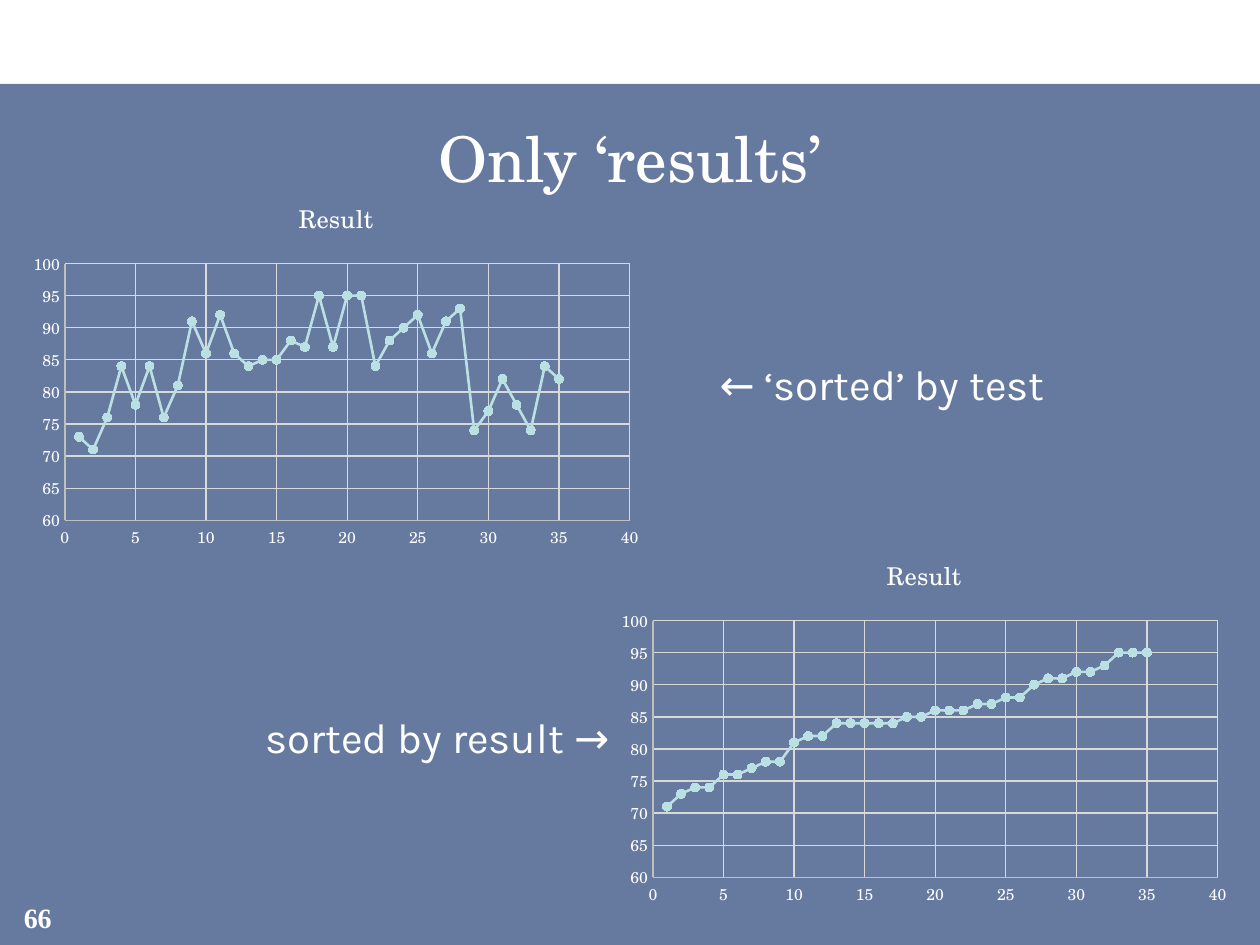
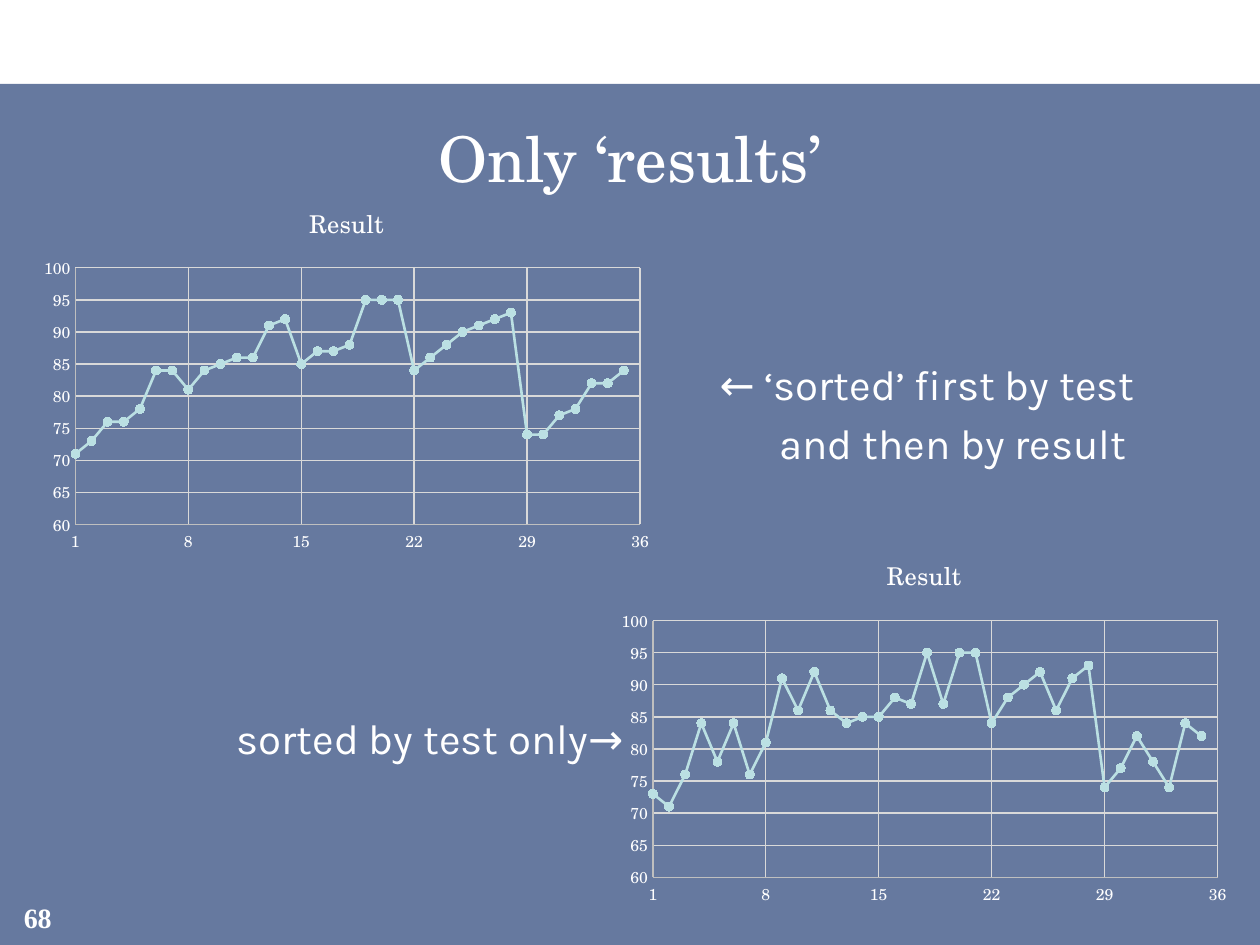
"""Build two slides that compare ways of sorting test results."""
from dataclasses import dataclass

from lxml import etree
from pptx import Presentation
from pptx.chart.data import XyChartData
from pptx.dml.color import RGBColor
from pptx.enum import chart as kinds, shapes, text
from pptx.oxml.ns import qn
from pptx.util import Pt


@dataclass(frozen=True)
class Theme:
    """Colours, fonts and type sizes of the deck."""
    navy: str = "002060"
    white: str = "FFFFFF"
    aqua: str = "BBE0E3"
    grid: str = "D9D9D9"
    axis: str = "BFBFBF"
    serif: str = "TeX Gyre Schola"
    sans: str = "Karla"
    times: str = "Times New Roman"
    head: int = 36
    body: int = 24
    page: int = 16
    label: int = 14
    chart: int = 10
    tick: int = 9


T = Theme()
TESTS = [
    [73, 71, 76, 84, 78, 84, 76],
    [81, 91, 86, 92, 86, 84, 85],
    [85, 88, 87, 95, 87, 95, 95],
    [84, 88, 90, 92, 86, 91, 93],
    [74, 77, 82, 78, 74, 84, 82],
]
BY_TEST = sum(TESTS, [])
BY_BOTH = sum(map(sorted, TESTS), [])
WEEKLY = {"minimum_scale": 1, "maximum_scale": 36, "major_unit": 7}


def put(item, values):
    """Set each named value on an object."""
    for name, value in values.items():
        setattr(item, name, value)


def place(item, left, top, width, height):
    """Move and size a shape in points."""
    put(item, {"left": Pt(left), "top": Pt(top),
               "width": Pt(width), "height": Pt(height)})


def style(font, face, size, bold=False):
    """Give a font its face, size and white colour."""
    put(font, {"name": face, "size": Pt(size), "bold": bold})
    font.color.rgb = RGBColor.from_string(T.white)


def stroke(line, tint, width):
    """Give a line its colour and width."""
    line.color.rgb = RGBColor.from_string(tint)
    line.width = Pt(width)


def paint(fill, tint):
    """Fill with one colour."""
    fill.solid()
    fill.fore_color.rgb = RGBColor.from_string(tint)


def add_band(slide):
    """Draw the see-through band and move it to the shared layout."""
    band = slide.shapes.add_shape(shapes.MSO_SHAPE.RECTANGLE,
                                  0, Pt(48), Pt(720), Pt(492))
    band.shadow.inherit = False
    band.line.fill.background()
    paint(band.fill, T.navy)
    tint = next(band.element.iter(qn("a:srgbClr")))
    etree.SubElement(tint, qn("a:alpha"), val="60000")
    slide.slide_layout.shapes.element.insert(2, band.element)


def add_title(slide, words):
    """Fill the title placeholder."""
    title = slide.shapes.title
    place(title, 18, 60, 684, 60)
    put(title.text_frame, {"text": words, "auto_size": text.MSO_AUTO_SIZE.NONE,
                           "vertical_anchor": text.MSO_ANCHOR.MIDDLE})
    para = title.text_frame.paragraphs[0]
    para.alignment = text.PP_ALIGN.CENTER
    style(para.font, T.serif, T.head)


def add_body(slide, lines):
    """Fill the body with captions given as words, indent and space before."""
    body = slide.placeholders[1]
    place(body, 18, 132, 684, 390)
    frame = body.text_frame
    put(frame, {"text": "\n".join(line[0] for line in lines),
                "auto_size": text.MSO_AUTO_SIZE.NONE, "margin_top": Pt(73)})
    for para, (_, indent, gap) in zip(frame.paragraphs, lines):
        props = para._p.get_or_add_pPr()
        props.set("marL", str(Pt(indent)))
        props.set("indent", "0")
        etree.SubElement(props, qn("a:buNone"))
        para.space_before = Pt(gap)
        style(para.font, T.sans, T.body)


def add_page(slide, number):
    """Write the page number in the lower left corner."""
    box = slide.shapes.add_textbox(0, Pt(511.2), Pt(43.2), Pt(28.8))
    put(box.text_frame, {"text": str(number), "word_wrap": True})
    para = box.text_frame.paragraphs[0]
    para.alignment = text.PP_ALIGN.CENTER
    style(para.font, T.times, T.page, True)


def set_axis(axis, scale):
    """Style an axis with its gridlines and scale."""
    put(axis, {"has_major_gridlines": True,
               "major_tick_mark": kinds.XL_TICK_MARK.NONE,
               "minor_tick_mark": kinds.XL_TICK_MARK.NONE, **scale})
    stroke(axis.format.line, T.axis, 0.75)
    stroke(axis.major_gridlines.format.line, T.grid, 0.75)
    style(axis.tick_labels.font, T.serif, T.tick)


def add_plot(slide, left, top, results, scale):
    """Plot results against their rank."""
    data = XyChartData()
    points = data.add_series("Result")
    for rank, result in enumerate(results, 1):
        points.add_data_point(rank, result)
    chart = slide.shapes.add_chart(
        kinds.XL_CHART_TYPE.XY_SCATTER_LINES,
        Pt(left), Pt(top), Pt(360), Pt(216), data).chart
    style(chart.font, T.serif, T.chart)
    put(chart, {"has_legend": False, "has_title": True})
    title = chart.chart_title
    title.include_in_layout = False
    title.text_frame.text = "Result"
    style(title.text_frame.paragraphs[0].runs[0].font, T.serif, T.label)
    set_axis(chart.category_axis, scale)
    set_axis(chart.value_axis, {"minimum_scale": 60})
    plot = chart.plots[0]
    plot.vary_by_categories = False
    series = plot.series[0]
    series.smooth = False
    stroke(series.format.line, T.aqua, 1.5)
    put(series.marker, {"style": kinds.XL_MARKER_STYLE.CIRCLE, "size": 5})
    paint(series.marker.format.fill, T.aqua)
    stroke(series.marker.format.line, T.aqua, 0.75)


def add_slide(deck, number, lines, plots, scale):
    """Add one slide with captions and plots."""
    slide = deck.slides.add_slide(deck.slide_layouts[1])
    add_title(slide, "Only ‘results’")
    add_body(slide, lines)
    add_page(slide, number)
    for left, top, results in plots:
        add_plot(slide, left, top, results, scale)
    return slide


def main():
    """Build and save the deck."""
    deck = Presentation()
    put(deck, {"slide_width": Pt(720), "slide_height": Pt(540)})
    first = add_slide(
        deck, 66,
        [("← ‘sorted’ by test", 386, 0), ("sorted by result →", 126.5, 173)],
        [(12, 102, BY_TEST), (348, 306, sorted(BY_TEST))], {})
    add_band(first)
    add_slide(
        deck, 68,
        [("← ‘sorted’ first by test", 386, 0), ("and then by result", 420, 4.8),
         ("sorted by test only→", 110, 139.5)],
        [(348, 306, BY_TEST), (18, 104.4, BY_BOTH)], WEEKLY)
    deck.save("out.pptx")


if __name__ == "__main__":
    main()
